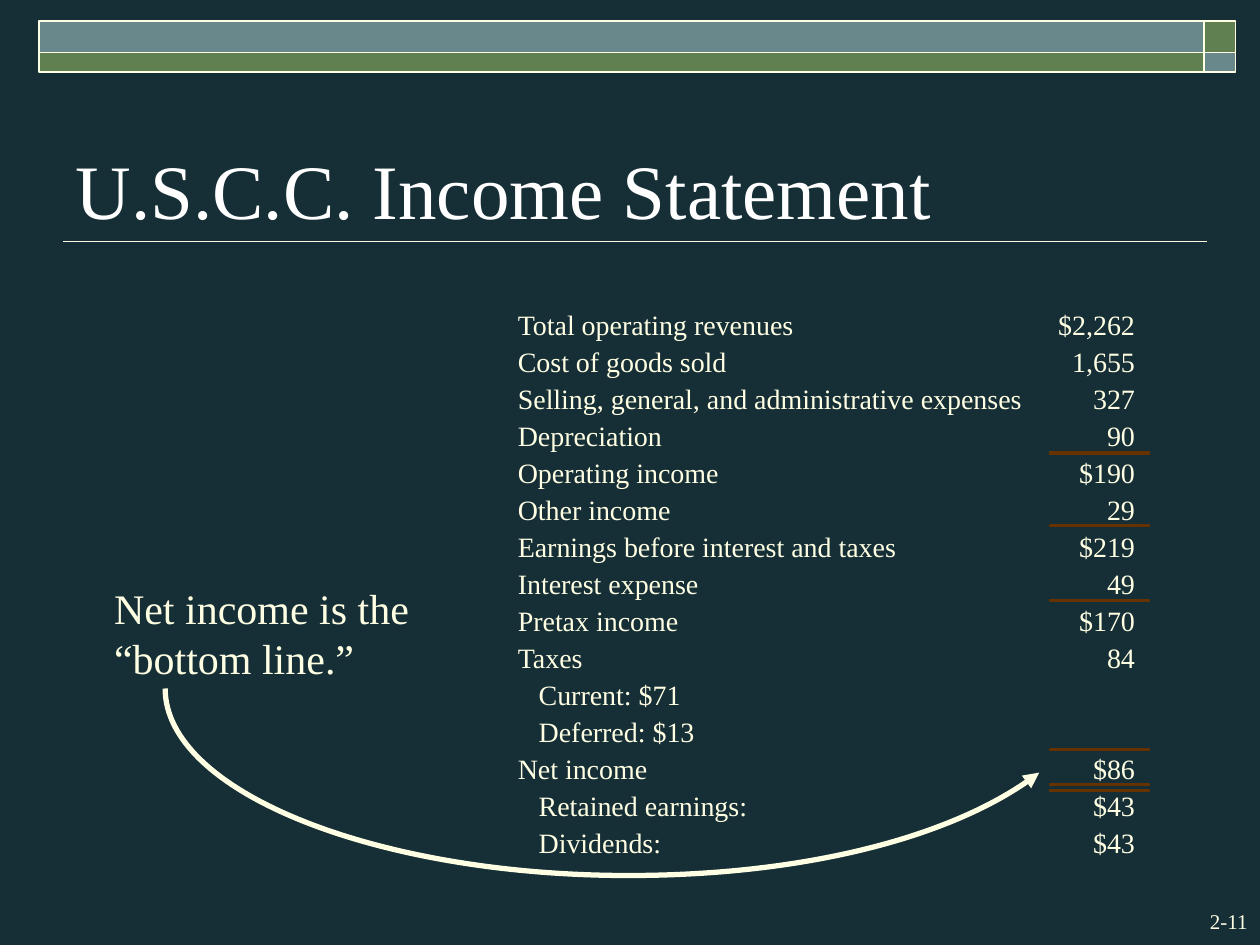
from dataclasses import dataclass

from lxml import etree
from pptx import Presentation
from pptx.dml.color import RGBColor
from pptx.enum.shapes import MSO_CONNECTOR, MSO_SHAPE
from pptx.enum.text import MSO_ANCHOR, PP_ALIGN
from pptx.oxml.ns import qn
from pptx.util import Cm, Pt

LEFT, RIGHT = PP_ALIGN.LEFT, PP_ALIGN.RIGHT
TOP, BOTTOM = MSO_ANCHOR.TOP, MSO_ANCHOR.BOTTOM
RECTANGLE = MSO_SHAPE.RECTANGLE
STRAIGHT = MSO_CONNECTOR.STRAIGHT
TITLE_ONLY = 5


@dataclass(frozen=True)
class Theme:
    font: str = "Times New Roman"
    background: RGBColor = RGBColor(0x16, 0x2E, 0x36)
    cream: RGBColor = RGBColor(0xFF, 0xFF, 0xE3)
    white: RGBColor = RGBColor(0xFF, 0xFF, 0xFF)
    green: RGBColor = RGBColor(0x61, 0x80, 0x52)
    teal: RGBColor = RGBColor(0x69, 0x88, 0x8B)
    brown: RGBColor = RGBColor(0x66, 0x33, 0x00)
    black: RGBColor = RGBColor(0, 0, 0)
    title_size: int = 44
    note_size: int = 24
    row_size: int = 16
    number_size: int = 12


@dataclass(frozen=True)
class Box:
    """A region in centimetres."""
    left: float
    top: float
    width: float
    height: float

    def lengths(self):
        return Cm(self.left), Cm(self.top), Cm(self.width), Cm(self.height)


THEME = Theme()

# label, amount, indent in cm, offsets in cm of the rules above the row
STATEMENT = [
    ("Total operating revenues", "$2,262", 0, ()),
    ("Cost of goods sold", "1,655", 0, ()),
    ("Selling, general, and administrative expenses", "327", 0, ()),
    ("Depreciation", "90", 0, ()),
    ("Operating income", "$190", 0, (-0.08, -0.05)),
    ("Other income", "29", 0, ()),
    ("Earnings before interest and taxes", "$219", 0, (-0.1,)),
    ("Interest expense", "49", 0, ()),
    ("Pretax income", "$170", 0, (-0.08,)),
    ("Taxes", "84", 0, ()),
    ("Current: $71", "", 0.42, ()),
    ("Deferred: $13", "", 0.42, ()),
    ("Net income", "$86", 0, (-0.06,)),
    ("Retained earnings:", "$43", 0.42, (-0.1, 0.03)),
    ("Dividends:", "$43", 0.42, ()),
]


def write(frame, text, size, color, align=LEFT, anchor=TOP):
    frame.text = text
    frame.word_wrap = True
    frame.vertical_anchor = anchor
    paragraph = frame.paragraphs[0]
    paragraph.alignment = align
    font = paragraph.runs[0].font
    font.name, font.size, font.color.rgb = THEME.font, Pt(size), color


def add_text(slide, box, text, size, align=LEFT, inset=True):
    frame = slide.shapes.add_textbox(*box.lengths()).text_frame
    if not inset:
        frame.margin_left = frame.margin_right = 0
        frame.margin_top = frame.margin_bottom = 0
    write(frame, text, size, THEME.cream, align)


def add_bar(slide, box, fill, line, weight):
    bar = slide.shapes.add_shape(RECTANGLE, *box.lengths())
    bar.shadow.inherit = False
    bar.fill.solid()
    bar.fill.fore_color.rgb = fill
    bar.line.color.rgb = line
    bar.line.width = Pt(weight)


def add_banner(slide, box):
    corner, upper = 0.64, 0.63
    wide, lower = box.width - corner, box.height - upper
    split, middle = box.left + wide, box.top + upper
    for part, fill in (
        (Box(split, box.top, corner, upper), THEME.green),
        (Box(box.left, box.top, wide, upper), THEME.teal),
        (Box(box.left, middle, wide, lower), THEME.green),
        (Box(split, middle, corner, lower), THEME.teal),
    ):
        add_bar(slide, part, fill, THEME.cream, 1)


def add_heading(slide, box, text):
    """Fill the title and underline it along the foot of the box."""
    title = slide.shapes.title
    title.left, title.top, title.width, title.height = box.lengths()
    write(title.text_frame, text, THEME.title_size, THEME.white, anchor=BOTTOM)
    foot = Cm(box.top + box.height)
    underline = slide.shapes.add_connector(
        STRAIGHT, Cm(box.left), foot, Cm(box.left + box.width + 0.21), foot)
    underline.line.color.rgb = THEME.cream
    underline.line.width = Pt(1)
    etree.SubElement(underline._element.spPr, qn("a:effectLst"))


def add_statement(slide, box, rows):
    pitch = box.height / len(rows)
    amount_width, rule_width, overhang = 1.8, 2.01, 0.3
    right = box.left + box.width
    label_width = box.width - amount_width
    for index, (label, amount, indent, rules) in enumerate(rows):
        top = box.top + index * pitch
        label_box = Box(box.left + indent, top, label_width - indent, 0.69)
        add_text(slide, label_box, label, THEME.row_size, inset=False)
        if amount:
            amount_box = Box(right - amount_width, top, amount_width, 0.69)
            add_text(slide, amount_box, amount, THEME.row_size, RIGHT, False)
        for offset in rules:
            rule = Box(right + overhang - rule_width, top + offset,
                       rule_width, 0.03)
            add_bar(slide, rule, THEME.black, THEME.brown, 0.75)


def add_curved_arrow(slide, box):
    """Sweep from the top left corner along the foot up to the right edge."""
    def point(x, y):
        return Cm(box.left + x * box.width), Cm(box.top + y * box.height)

    builder = slide.shapes.build_freeform(*point(0, 0))
    builder.add_line_segments(
        [point(0, 0.55), point(0.24, 1), point(0.53, 1),
         point(0.73, 1), point(0.91, 0.78), point(1, 0.45)], close=False)
    arrow = builder.convert_to_shape()
    arrow.shadow.inherit = False
    arrow.fill.background()
    arrow.line.color.rgb = THEME.cream
    arrow.line.width = Pt(3)
    etree.SubElement(arrow.line._get_or_add_ln(), qn("a:tailEnd"),
                     type="triangle")

    # Every three straight segments become one cubic curve.
    segments = list(arrow._element.iter(qn("a:lnTo")))
    path = segments[0].getparent()
    for first in range(0, len(segments), 3):
        curve = etree.SubElement(path, qn("a:cubicBezTo"))
        for segment in segments[first:first + 3]:
            curve.append(segment[0])
            path.remove(segment)


def main():
    deck = Presentation()
    deck.slide_width, deck.slide_height = Cm(25.4), Cm(19.05)
    slide = deck.slides.add_slide(deck.slide_layouts[TITLE_ONLY])
    slide.background.fill.solid()
    slide.background.fill.fore_color.rgb = THEME.background

    add_banner(slide, Box(0.78, 0.43, 24.13, 1.02))
    add_heading(slide, Box(1.27, 1.7, 22.86, 3.17), "U.S.C.C. Income Statement")
    add_statement(slide, Box(10.44, 6.2, 12.44, 11.19), STATEMENT)
    add_text(slide, Box(2.05, 11.61, 6.99, 2.29),
             "Net income is the “bottom line.”", THEME.note_size)
    add_curved_arrow(slide, Box(3.33, 13.88, 17.62, 3.77))
    add_text(slide, Box(23.29, 18.2, 2.11, 0.77), "2-11",
             THEME.number_size, RIGHT)
    deck.save("out.pptx")


if __name__ == "__main__":
    main()
